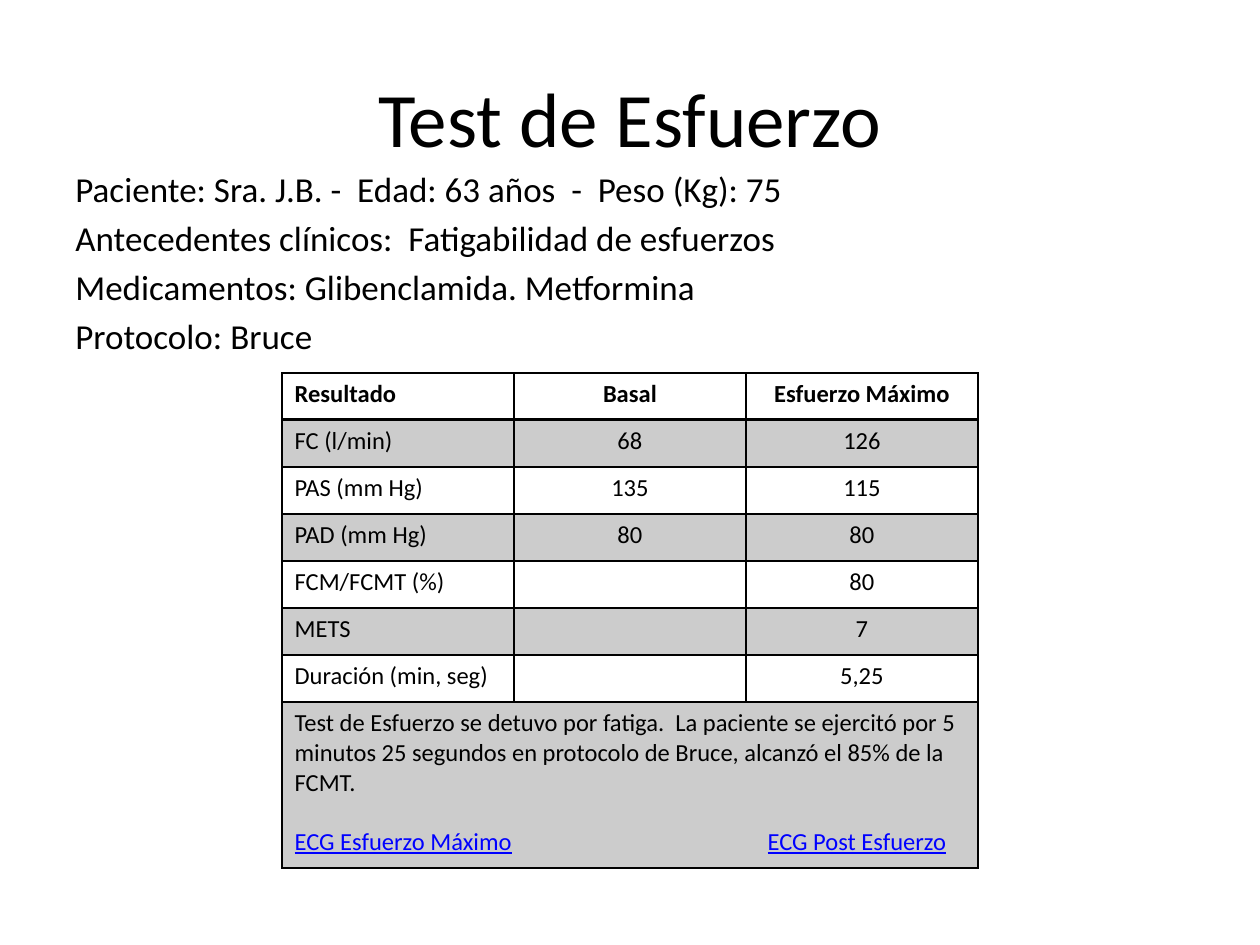
"""Builds the stress test slide with patient details and a results table."""
import pptx
import pptx.dml.color
import pptx.enum.text
import pptx.oxml
import pptx.oxml.ns
import pptx.util

TITLE = "Test de Esfuerzo"
DETAILS = [
    "Paciente: Sra. J.B. -  Edad: 63 años  -  Peso (Kg): 75",
    "Antecedentes clínicos:  Fatigabilidad de esfuerzos",
    "Medicamentos: Glibenclamida. Metformina",
    "Protocolo: Bruce",
]
RESULTS = [
    ("Resultado", "Basal", "Esfuerzo Máximo"),
    ("FC (l/min)", "68", "126"),
    ("PAS (mm Hg)", "135", "115"),
    ("PAD (mm Hg)", "80", "80"),
    ("FCM/FCMT (%)", "", "80"),
    ("METS", "", "7"),
    ("Duración (min, seg)", "", "5,25"),
]
CONCLUSION = (
    "Test de Esfuerzo se detuvo por fatiga.  La paciente se ejercitó por 5 minutos "
    "25 segundos en protocolo de Bruce, alcanzó el 85% de la FCMT."
)
ECG_LABELS = ["ECG Esfuerzo Máximo", "ECG Post Esfuerzo"]

THEME = {
    "font": "Calibri", "text": "000000", "link": "0000FF", "band": "CCCCCC",
    "title": 44, "body": 20, "table": 14, "rule": 1, "header_rule": 2,
}
TITLE_BOX = (63, 38, 1134, 158)
DETAILS_BOX = (63, 161, 1134, 624)
TABLE_LEFT, TABLE_TOP, COLUMN_WIDTH = 282, 373, 232
ROW_HEIGHT, CONCLUSION_HEIGHT = 47, 166
ECG_TAB = 473
LEFT = pptx.enum.text.PP_ALIGN.LEFT
CENTER = pptx.enum.text.PP_ALIGN.CENTER


def px(length):
    return pptx.util.Emu(round(length * 914400 / 126))


def color(name):
    return pptx.dml.color.RGBColor.from_string(THEME[name])


def style(paragraph, size, align=LEFT, bold=False):
    paragraph.alignment = align
    paragraph.font.name = THEME["font"]
    paragraph.font.size = pptx.util.Pt(THEME[size])
    paragraph.font.bold = bold
    paragraph.font.color.rgb = color("text")


def add_text(slide, box, lines, size, align, anchor):
    frame = slide.shapes.add_textbox(*map(px, box)).text_frame
    frame.word_wrap = True
    frame.vertical_anchor = anchor
    frame.text = "\n".join(lines)
    for index, paragraph in enumerate(frame.paragraphs):
        style(paragraph, size, align)
        if index:
            paragraph.space_before = pptx.util.Pt(THEME[size] * 0.2)


def set_borders(cell, row):
    widths = {"L": "rule", "R": "rule",
              "T": "header_rule" if row == 1 else "rule",
              "B": "header_rule" if row == 0 else "rule"}
    properties = cell._tc.get_or_add_tcPr()
    for position, (side, width) in enumerate(widths.items()):
        properties.insert(position, pptx.oxml.parse_xml(
            f'<a:ln{side} {pptx.oxml.ns.nsdecls("a")} w="{pptx.util.Pt(THEME[width])}">'
            f'<a:solidFill><a:srgbClr val="{THEME["text"]}"/></a:solidFill></a:ln{side}>'))


def fill_conclusion(cell):
    frame = cell.text_frame
    frame.text = CONCLUSION
    style(frame.paragraphs[0], "table")
    paragraph = frame.add_paragraph()
    paragraph.space_before = pptx.util.Pt(17)
    paragraph._p.get_or_add_pPr().append(pptx.oxml.parse_xml(
        f'<a:tabLst {pptx.oxml.ns.nsdecls("a")}><a:tab pos="{px(ECG_TAB)}" algn="l"/></a:tabLst>'))
    style(paragraph, "table")
    for index, label in enumerate(ECG_LABELS):
        if index:
            paragraph.add_run().text = "\t"
        run = paragraph.add_run()
        run.text = label
        run.font.underline = True
        run.font.color.rgb = color("link")


def add_results(slide):
    heights = [ROW_HEIGHT] * len(RESULTS) + [CONCLUSION_HEIGHT]
    columns = len(RESULTS[0])
    table = slide.shapes.add_table(
        len(heights), columns, px(TABLE_LEFT), px(TABLE_TOP),
        px(COLUMN_WIDTH * columns), px(sum(heights))).table
    for column in table.columns:
        column.width = px(COLUMN_WIDTH)
    for row, height in enumerate(heights):
        table.rows[row].height = px(height)
        for column in range(columns):
            cell = table.cell(row, column)
            if row % 2:
                cell.fill.solid()
                cell.fill.fore_color.rgb = color("band")
            else:
                cell.fill.background()
            set_borders(cell, row)
            if row < len(RESULTS):
                cell.text = RESULTS[row][column]
                style(cell.text_frame.paragraphs[0], "table",
                      CENTER if column else LEFT, row == 0)
    last = len(RESULTS)
    table.cell(last, 0).merge(table.cell(last, columns - 1))
    fill_conclusion(table.cell(last, 0))


def main():
    presentation = pptx.Presentation()
    presentation.slide_width, presentation.slide_height = px(1260), px(945)
    slide = presentation.slides.add_slide(presentation.slide_layouts[6])
    anchors = pptx.enum.text.MSO_ANCHOR
    add_text(slide, TITLE_BOX, [TITLE], "title", CENTER, anchors.MIDDLE)
    add_text(slide, DETAILS_BOX, DETAILS, "body", LEFT, anchors.TOP)
    add_results(slide)
    presentation.save("out.pptx")


if __name__ == "__main__":
    main()
